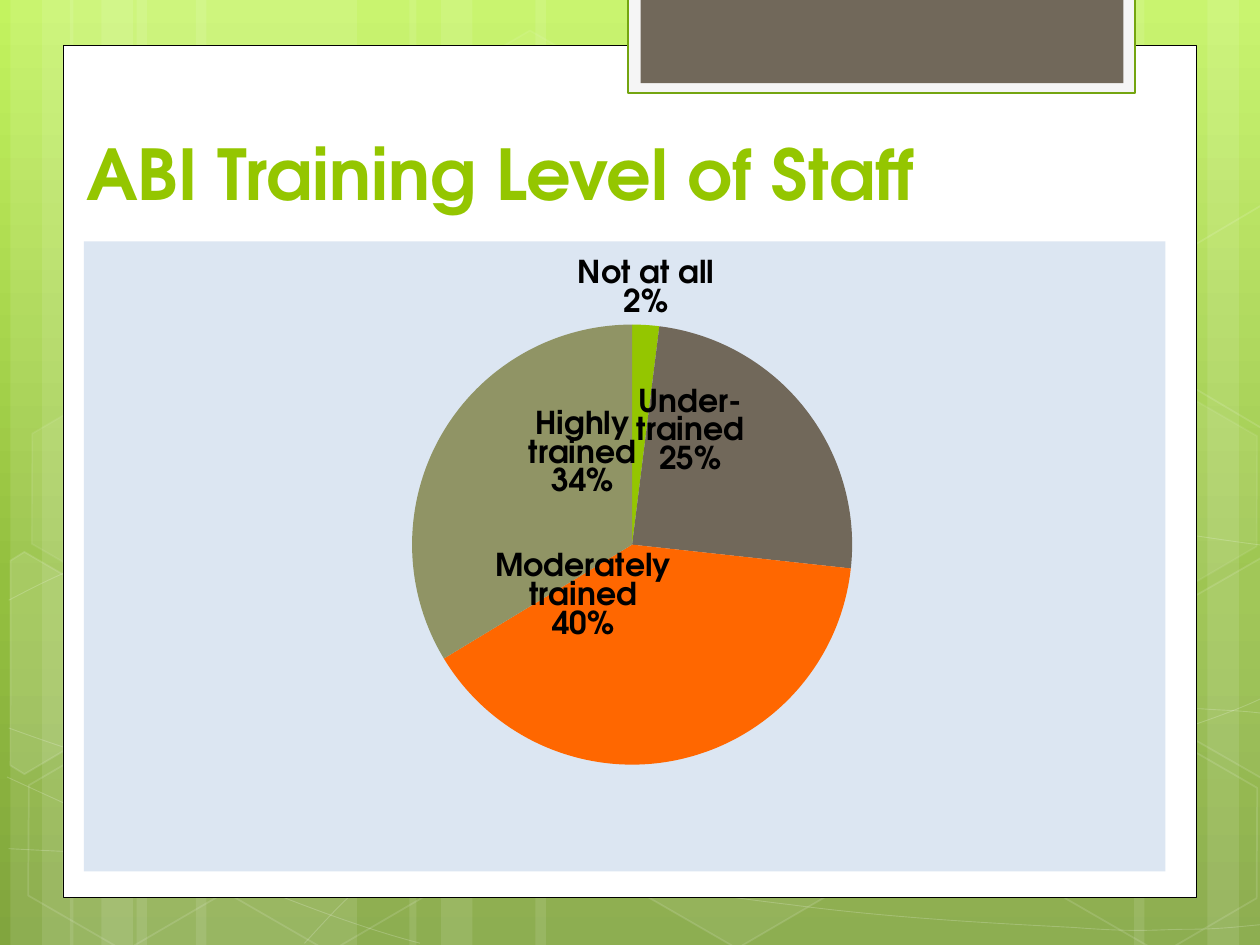
from copy import deepcopy
from math import cos, radians, sin

from lxml.etree import SubElement
from pptx import Presentation
from pptx.chart.data import CategoryChartData
from pptx.dml.color import RGBColor
from pptx.enum.chart import XL_CHART_TYPE, XL_LABEL_POSITION
from pptx.enum.shapes import MSO_SHAPE
from pptx.enum.text import MSO_ANCHOR, PP_ALIGN
from pptx.oxml import parse_xml
from pptx.oxml.ns import nsdecls, qn
from pptx.util import Pt

FONT = "TeX Gyre Adventor"
TILT = 30
COLORS = {
    "sky": "C3F35F", "leaf": "93BF3F", "moss": "81A53E", "white": "FFFFFF",
    "black": "000000", "tab": "F5F5F5", "tab_line": "74A510", "green": "94C600",
    "brown": "71685A", "orange": "FF6700", "olive": "909465", "panel": "DCE6F2",
}
BANDS = [
    (78, 126), (6, 36), (24, 60), (112, 126), (40, 36), (58, 60),
    (528, 126), (690, 36), (648, 60), (306, 222), (234, 36), (252, 60),
]
CURVES = [
    [(5, 485), (44, 487), (83, 489), (137, 488), (191, 487), (258, 486), (330, 479),
     (402, 472), (504, 458), (570, 444), (636, 431), (703, 409), (725, 397)],
    [(5, 343), (26, 332), (47, 321), (87, 310), (128, 300), (186, 284), (250, 279),
     (314, 274), (392, 273), (471, 279), (550, 284), (682, 307), (725, 312)],
    [(4, 444), (91, 484), (178, 523), (240, 539)],
    [(5, 416), (27, 424), (50, 432), (92, 444), (134, 454), (197, 472), (257, 485),
     (317, 497), (392, 510), (452, 517), (512, 525), (576, 528), (614, 530),
     (652, 533), (662, 531), (680, 531), (699, 531), (712, 529), (725, 528)],
    [(174, 539), (187, 525), (200, 510), (217, 498), (235, 485), (259, 470), (279, 460),
     (300, 450), (312, 446), (338, 438), (364, 431), (413, 421), (438, 416),
     (464, 411), (467, 411), (490, 410), (512, 407), (547, 405), (572, 405),
     (597, 404), (638, 405), (638, 405), (654, 405), (670, 405), (686, 405),
     (699, 406), (711, 406), (724, 408)],
]
HEXAGONS = [
    (240, 26, 4, 8), (358, 424, 6, 12), (8, 425.5, None, 12), (10, 224.5, 7, 8),
    (125, 426, None, 12), (542, 326, 10, 12), (600.5, 427, None, 12), (600.5, 226, 7, 8),
]
CUT_HEXAGONS = [
    ((-24, 330.5), [(6, 320), (14, 315), (69, 347), (68, 410), (14, 442), (6, 437)], 10),
    ((660, 320), [(667, 349), (721, 318), (726, 321), (726, 441), (721, 444), (667, 413)], 4),
    ((660, 119), [(667, 149), (721, 117), (727, 121), (726, 241), (721, 244), (667, 212)], None),
]
SLICES = [
    ("Not at all", 2, "green", None),
    ("Under-trained", 25, "brown", (-16, -25.5)),
    ("Moderately trained", 40, "orange", (-41.5, -32)),
    ("Highly trained", 34, "olive", (26.5, -21)),
]


def rgb(name):
    """Return the named colour."""
    return RGBColor.from_string(COLORS[name])


def set_color(fmt, name, opacity=None):
    """Make a fill solid, with an optional opacity in percent."""
    fmt.solid()
    fmt.fore_color.rgb = rgb(name)
    if opacity is not None:
        clr = fmt._xPr.find(qn("a:solidFill"))[0]
        SubElement(clr, qn("a:alpha"), val=str(opacity * 1000))


def style(sp, fill=None, opacity=None, line=None, width=1, line_opacity=None):
    """Set the fill and outline of a shape and drop its shadow."""
    sp.shadow.inherit = False
    if fill:
        set_color(sp.fill, fill, opacity)
    else:
        sp.fill.background()
    if line:
        set_color(sp.line.fill, line, line_opacity)
        sp.line.width = Pt(width)
    else:
        sp.line.fill.background()


def add_box(s, kind, box, **look):
    """Add a preset shape in a box given in points."""
    sp = s.shapes.add_shape(kind, *map(Pt, box))
    style(sp, **look)
    return sp


def add_outline(s, points, close, **look):
    """Add a freeform through points."""
    pts = [(Pt(x), Pt(y)) for x, y in points]
    builder = s.shapes.build_freeform(*pts[0])
    builder.add_line_segments(pts[1:], close=close)
    sp = builder.convert_to_shape()
    style(sp, **look)
    return sp


def add_curve(s, knots, **look):
    """Add a chain of cubic Bezier segments."""
    sp = add_outline(s, knots, False, **look)
    lines = sp._element.findall(".//" + qn("a:lnTo"))
    for i in range(0, len(lines), 3):
        bezier = parse_xml(f"<a:cubicBezTo {nsdecls('a')}/>")
        lines[i].addprevious(bezier)
        for line in lines[i:i + 3]:
            bezier.append(line[0])
            line.getparent().remove(line)


def turn_back(point):
    """Rotate a point about the origin against the tilt."""
    x, y = point
    c, d = cos(radians(TILT)), sin(radians(TILT))
    return x * c + y * d, y * c - x * d


def add_backdrop(s, height):
    """Draw the gradient, light bands, curves and hexagons."""
    fill = s.background.fill
    fill.gradient()
    fill.gradient_angle = 270
    stops = s._element.find(".//" + qn("a:gsLst"))
    stops.append(deepcopy(stops[-1]))
    for stop, name, pos in zip(fill.gradient_stops, ("sky", "leaf", "moss"), (0, 0.62, 1)):
        stop.color.rgb = rgb(name)
        stop.position = pos
    for left, width in BANDS:
        add_box(s, MSO_SHAPE.RECTANGLE, (left, 0, width, height), fill="white", opacity=10)
    for knots in CURVES:
        add_curve(s, knots, line="white", width=0.5, line_opacity=20)
    for left, top, opacity, line_opacity in HEXAGONS:
        sp = add_box(s, MSO_SHAPE.HEXAGON, (left, top, 126, 109.5),
                     fill="white" if opacity else None, opacity=opacity,
                     line="white", line_opacity=line_opacity)
        sp.adjustments[0] = 0.285
        sp.rotation = TILT
    for corner, points, opacity in CUT_HEXAGONS:
        sp = add_outline(s, [turn_back(p) for p in points], True,
                         fill="white" if opacity else None, opacity=opacity,
                         line="white", line_opacity=12)
        sp.left, sp.top = map(Pt, corner)
        sp.rotation = TILT


def add_page(s, box, tab):
    """Draw the white page and the tab hanging over its top edge."""
    left, top, width, height = tab
    add_box(s, MSO_SHAPE.RECTANGLE, box, fill="white", line="black", width=0.5)
    add_box(s, MSO_SHAPE.RECTANGLE, tab, fill="tab", line="tab_line", width=1.25)
    add_box(s, MSO_SHAPE.RECTANGLE, (left + 7, top, width - 13.5, height - 5.5), fill="brown")


def add_title(s, box):
    """Place and format the title."""
    sp = s.shapes.title
    sp.left, sp.top, sp.width, sp.height = map(Pt, box)
    s.shapes._spTree.append(sp._element)
    tf = sp.text_frame
    tf.vertical_anchor = MSO_ANCHOR.BOTTOM
    p = tf.paragraphs[0]
    p.alignment = PP_ALIGN.LEFT
    r = p.add_run()
    r.text = "ABI Training Level of Staff"
    r.font.name, r.font.size, r.font.bold = FONT, Pt(40), True
    r.font.color.rgb = rgb("green")


def manual_layout(inner=False, **values):
    """Return a chart layout element with the given fractions."""
    layout = parse_xml(f"<c:layout {nsdecls('c')}><c:manualLayout/></c:layout>")
    if inner:
        SubElement(layout[0], qn("c:layoutTarget"), val="inner")
        for mode in ("xMode", "yMode"):
            SubElement(layout[0], qn("c:" + mode), val="edge")
    for key, value in values.items():
        SubElement(layout[0], qn("c:" + key), val=str(value))
    return layout


def format_label(label, shift, width, height):
    """Show category and percentage, shifted from the slice's centre."""
    font = label.font
    font.name, font.size, font.bold = FONT, Pt(18), True
    font.color.rgb = rgb("black")
    label.position = XL_LABEL_POSITION.CENTER if shift else XL_LABEL_POSITION.OUTSIDE_END
    el = label._get_or_add_dLbl()
    for key, val in (("showVal", "0"), ("showCatName", "1"), ("showPercent", "1")):
        el.find(qn("c:" + key)).set("val", val)
    SubElement(el, qn("c:separator")).text = "\n"
    el.find(qn("c:txPr")).addprevious(
        parse_xml(f'<c:numFmt {nsdecls("c")} formatCode="0%" sourceLinked="0"/>'))
    if shift:
        el.insert(1, manual_layout(x=shift[0] / width, y=shift[1] / height))


def add_pie(s, box, pie):
    """Add the pie chart of training levels, with the pie in its own box."""
    width, height = box[2:]
    data = CategoryChartData()
    data.categories = [row[0] for row in SLICES]
    data.add_series("Series 1", [row[1] for row in SLICES])
    chart = s.shapes.add_chart(XL_CHART_TYPE.PIE, *map(Pt, box), data).chart
    chart.has_title = chart.has_legend = False
    chart.font.name, chart.font.size = FONT, Pt(10)
    chart.font.color.rgb = rgb("black")
    plot = chart.plots[0]
    plot.vary_by_categories = True
    for i, (_, _, color, shift) in enumerate(SLICES):
        point = plot.series[0].points[i]
        set_color(point.format.fill, color)
        point.format.line.fill.background()
        format_label(point.data_label, shift, width, height)
    area = chart._chartSpace.chart.plotArea
    for old in area.findall(qn("c:layout")):
        area.remove(old)
    x, y, w, h = pie
    area.insert(0, manual_layout(True, x=x / width, y=y / height, w=w / width, h=h / height))
    chart._chartSpace.chart.addnext(parse_xml(
        f'<c:spPr {nsdecls("c", "a")}><a:solidFill><a:srgbClr val="{COLORS["panel"]}"/>'
        "</a:solidFill><a:ln><a:noFill/></a:ln></c:spPr>"))


def main():
    """Build the slide and save it."""
    prs = Presentation()
    prs.slide_width, prs.slide_height = Pt(720), Pt(540)
    s = prs.slides.add_slide(prs.slide_layouts[5])
    add_backdrop(s, 540)
    add_page(s, (36, 26, 648, 487), (359, -1.5, 289.5, 54.5))
    add_title(s, (42, 36, 553, 90))
    add_pie(s, (48, 138, 618, 360), (187.5, 47.5, 251.5, 251.5))
    prs.save("out.pptx")


if __name__ == "__main__":
    main()
